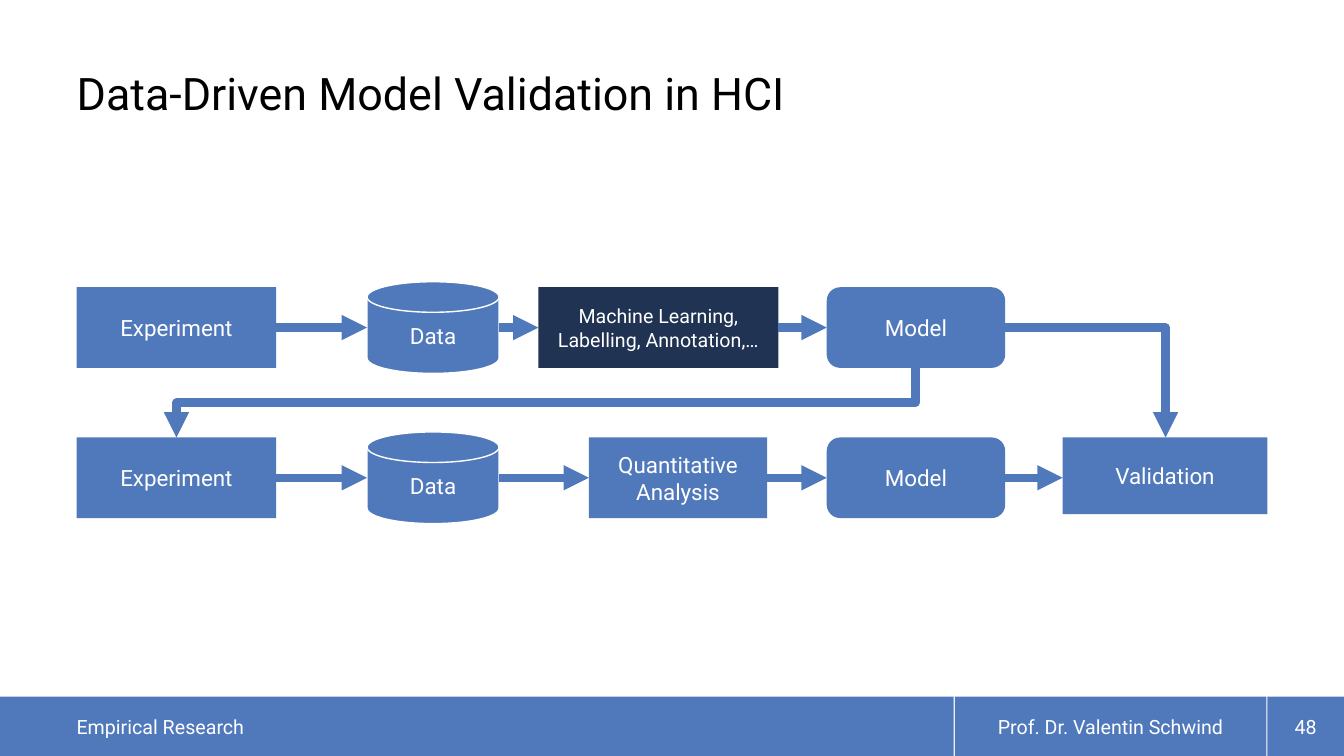
from itertools import pairwise

from lxml.etree import SubElement
from pptx import Presentation
from pptx.dml.color import RGBColor
from pptx.enum.shapes import MSO_CONNECTOR as CONN, MSO_SHAPE as SHAPE
from pptx.enum.text import MSO_ANCHOR as ANCHOR, PP_ALIGN as ALIGN
from pptx.oxml.ns import qn
from pptx.util import Inches, Pt

BLUE = RGBColor(0x50, 0x79, 0xBC)
NAVY = RGBColor(0x20, 0x33, 0x53)
WHITE = RGBColor(0xFF, 0xFF, 0xFF)
BLACK = RGBColor(0, 0, 0)

W, H = 13.33, 7.5
MARGIN = 0.76
FOOT_H = 0.59
FOOT_Y = H - FOOT_H
ROW_Y = [2.85, 4.34]
BOX_H = 0.8
DISK_H = 0.91

prs = Presentation()
prs.slide_width, prs.slide_height = Inches(W), Inches(H)
s = prs.slides.add_slide(prs.slide_layouts[6])


def write(sp, text, size, color=WHITE, align=ALIGN.CENTER, anchor=ANCHOR.MIDDLE):
    tf = sp.text_frame
    tf.word_wrap = True
    tf.vertical_anchor = anchor
    p = tf.paragraphs[0]
    p.text = text
    p.alignment = align
    p.font.name, p.font.size, p.font.color.rgb = "Roboto", Pt(size), color
    return tf


def add_arrow(kind, *ends):
    """Draw a thick blue connector with a triangle at its end."""
    c = s.shapes.add_connector(kind, *ends)
    c.line.color.rgb, c.line.width = BLUE, Pt(6)
    SubElement(c.line._get_or_add_ln(), qn("a:tailEnd"), type="triangle")
    SubElement(c._element.spPr, qn("a:effectLst"))
    return c


# Title
title = s.shapes.add_textbox(Inches(MARGIN), Inches(0.13), Inches(11.81), Inches(1.06))
tf = write(title, "Data-Driven Model Validation in HCI", 32, BLACK, ALIGN.LEFT, ANCHOR.BOTTOM)
tf.margin_left = tf.margin_right = tf.margin_top = tf.margin_bottom = 0
tf.paragraphs[0].line_spacing = 0.9

# Footer
for text, left, right, indent, align in [
    ("Empirical Research", 0, 9.46, MARGIN, ALIGN.LEFT),
    ("Prof. Dr. Valentin Schwind", 9.47, 12.56, 0, ALIGN.CENTER),
    ("48", 12.57, W, 0, ALIGN.CENTER),
]:
    sp = s.shapes.add_shape(SHAPE.RECTANGLE, Inches(left), Inches(FOOT_Y),
                            Inches(right - left), Inches(FOOT_H))
    sp.shadow.inherit = False
    sp.fill.solid()
    sp.fill.fore_color.rgb = BLUE
    sp.line.fill.background()
    tf = write(sp, text, 14, align=align)
    tf.margin_left = Inches(indent)
    tf.margin_right = tf.margin_top = tf.margin_bottom = 0

# Flow boxes: text, shape, left, width, height, fill, text size
experiment = ("Experiment", SHAPE.RECTANGLE, MARGIN, 1.98, BOX_H, BLUE, 16)
data = ("Data", SHAPE.FLOWCHART_MAGNETIC_DISK, 3.64, 1.31, DISK_H, BLUE, 16)
learning = ("Machine Learning,\vLabelling, Annotation,…", SHAPE.RECTANGLE, 5.34, 2.38, BOX_H, NAVY, 14)
analysis = ("Quantitative Analysis", SHAPE.RECTANGLE, 5.84, 1.77, BOX_H, BLUE, 16)
model = ("Model", SHAPE.ROUNDED_RECTANGLE, 8.2, 1.77, BOX_H, BLUE, 16)
validation = ("Validation", SHAPE.RECTANGLE, 10.54, 2.03, 0.76, BLUE, 16)

flows = [
    [experiment, data, learning, model],
    [experiment, data, analysis, model, validation],
]
for y, flow in zip(ROW_Y, flows):
    boxes = []
    for text, shape, left, width, height, fill, size in flow:
        is_disk = shape == SHAPE.FLOWCHART_MAGNETIC_DISK
        top = y - (DISK_H - BOX_H) / 2 if is_disk else y
        sp = s.shapes.add_shape(shape, Inches(left), Inches(top), Inches(width), Inches(height))
        sp.shadow.inherit = False
        sp.fill.solid()
        sp.fill.fore_color.rgb = fill
        if is_disk:
            sp.line.color.rgb, sp.line.width = WHITE, Pt(1)
        else:
            sp.line.fill.background()
        write(sp, text, size)
        boxes.append(sp)

    mid = Inches(y + BOX_H / 2)
    for a, b in pairwise(boxes):
        arrow = add_arrow(CONN.STRAIGHT, a.left + a.width, mid, b.left, mid)
        if a.height == Inches(BOX_H):
            arrow.begin_connect(a, 3)
        if b.height == Inches(BOX_H):
            arrow.end_connect(b, 1)

# First model down to the second experiment: a quarter turn about its centre
x1, y1 = 9.08, ROW_Y[0] + BOX_H
x2, y2 = 1.75, ROW_Y[1]
cx, cy = (x1 + x2) / 2, (y1 + y2) / 2
dx, dy = (y2 - y1) / 2, (x1 - x2) / 2
back = add_arrow(CONN.ELBOW, Inches(cx - dx), Inches(cy - dy), Inches(cx + dx), Inches(cy + dy))
back._element.spPr.find(qn("a:xfrm")).set("rot", str(90 * 60000))

# First model to validation: a single corner
corner = add_arrow(CONN.ELBOW, Inches(9.97), Inches(ROW_Y[0] + BOX_H / 2),
                   Inches(11.56), Inches(ROW_Y[1]))
corner._element.spPr.find(qn("a:prstGeom")).set("prst", "bentConnector2")

prs.save("out.pptx")
